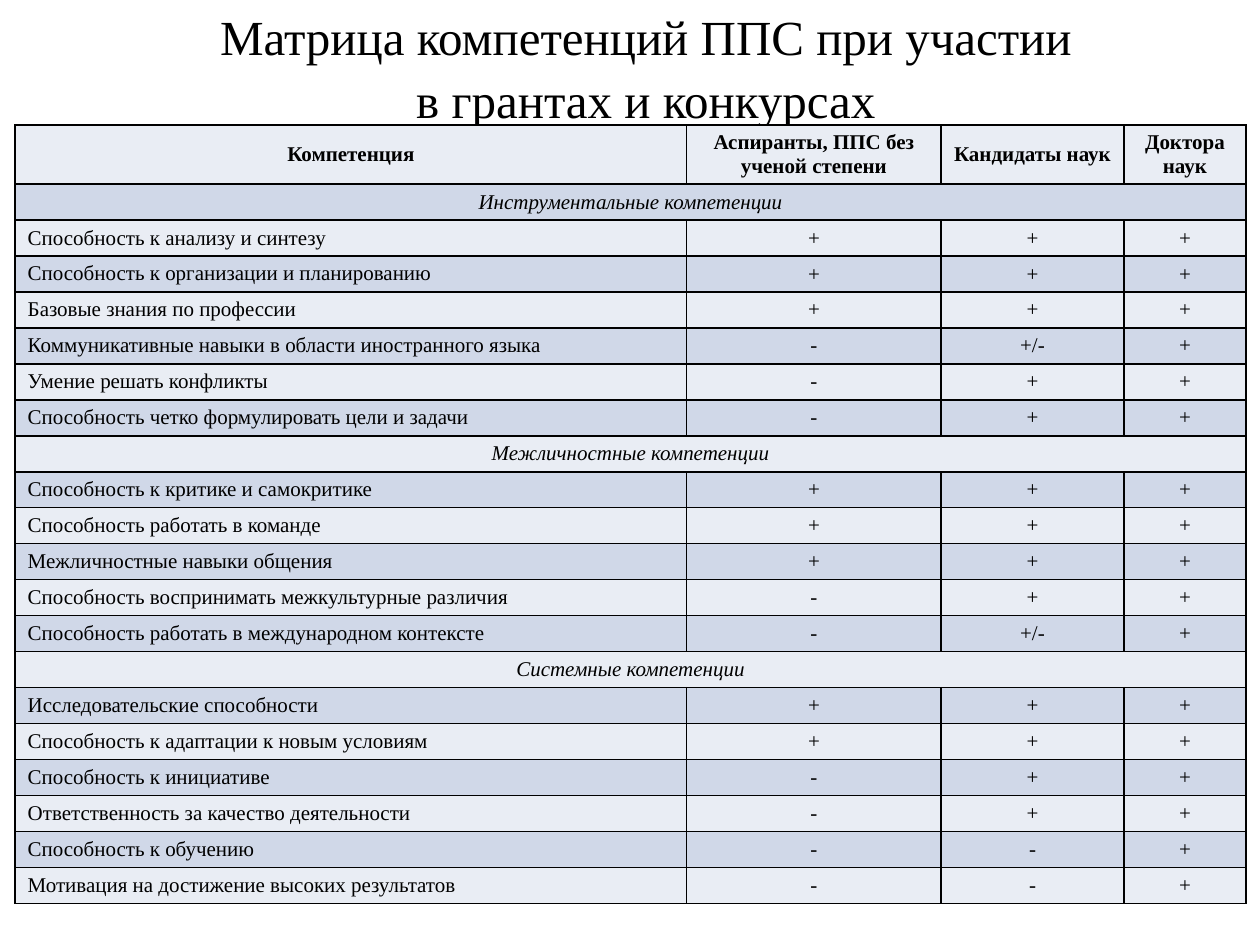
from pptx import Presentation
from pptx.dml.color import RGBColor
from pptx.enum.text import MSO_ANCHOR as Anchor, MSO_AUTO_SIZE as Fit, PP_ALIGN as Align
from pptx.oxml import parse_xml
from pptx.oxml.ns import nsdecls
from pptx.util import Inches, Pt

BLACK = RGBColor(0x00, 0x00, 0x00)
LIGHT = RGBColor(0xE9, 0xED, 0xF4)
BLUE = RGBColor(0xD0, 0xD8, 0xE8)
FONT = "Times New Roman"

# A row with one entry is a section heading across the table
ROWS = [
    ("Компетенция", "Аспиранты, ППС без ученой степени", "Кандидаты наук", "Доктора наук"),
    ("Инструментальные компетенции",),
    ("Способность к анализу и синтезу", "+", "+", "+"),
    ("Способность к организации и планированию", "+", "+", "+"),
    ("Базовые знания по профессии", "+", "+", "+"),
    ("Коммуникативные навыки в области иностранного языка", "-", "+/-", "+"),
    ("Умение решать конфликты", "-", "+", "+"),
    ("Способность четко формулировать цели и задачи", "-", "+", "+"),
    ("Межличностные компетенции",),
    ("Способность к критике и самокритике", "+", "+", "+"),
    ("Способность работать в команде", "+", "+", "+"),
    ("Межличностные навыки общения", "+", "+", "+"),
    ("Способность воспринимать межкультурные различия", "-", "+", "+"),
    ("Способность работать в международном контексте", "-", "+/-", "+"),
    ("Системные компетенции",),
    ("Исследовательские способности", "+", "+", "+"),
    ("Способность к адаптации к новым условиям", "+", "+", "+"),
    ("Способность к инициативе", "-", "+", "+"),
    ("Ответственность за качество деятельности", "-", "+", "+"),
    ("Способность к обучению", "-", "-", "+"),
    ("Мотивация на достижение высоких результатов", "-", "-", "+"),
]
WIDTHS = [5.33, 2.02, 1.45, 0.97]


def add_run(para, text, size, bold=False, italic=False):
    run = para.add_run()
    run.text = text
    font = run.font
    font.name, font.size = FONT, Pt(size)
    font.bold, font.italic = bold, italic
    font.color.rgb = BLACK


def add_edges(cell):
    props = cell._tc.get_or_add_tcPr()
    for n, side in enumerate(("lnL", "lnR", "lnT", "lnB")):
        props.insert(n, parse_xml(
            f'<a:{side} {nsdecls("a")} w="{Pt(1)}"><a:solidFill>'
            f'<a:srgbClr val="{BLACK}"/></a:solidFill></a:{side}>'))


prs = Presentation()
prs.slide_width, prs.slide_height = Inches(10), Inches(7.5)
slide = prs.slides.add_slide(prs.slide_layouts[5])

# Title
title = slide.shapes.title
title.left, title.top = Inches(1.54), Inches(-0.03)
title.width, title.height = Inches(7.17), Inches(1.04)
frame = title.text_frame
frame.word_wrap = True
frame.auto_size = Fit.NONE
frame.vertical_anchor = Anchor.TOP
para = frame.paragraphs[0]
para.alignment = Align.CENTER
para.line_spacing = 1.07
add_run(para, "Матрица компетенций ППС при участии в грантах и конкурсах", 28)

# Table grid
table = slide.shapes.add_table(
    len(ROWS), len(WIDTHS), Inches(0.12), Inches(0.99),
    Inches(sum(WIDTHS)), Inches(0.28 * len(ROWS))).table
for col, width in zip(table.columns, WIDTHS):
    col.width = Inches(width)
for row in table.rows:
    row.height = Inches(0.28)
table.rows[0].height = Inches(0.47)

# Table cells
for r, texts in enumerate(ROWS):
    head, section = r == 0, len(texts) == 1
    for c in range(len(WIDTHS)):
        cell = table.cell(r, c)
        cell.fill.solid()
        cell.fill.fore_color.rgb = BLUE if r % 2 else LIGHT
        add_edges(cell)
        if c >= len(texts):
            continue
        para = cell.text_frame.paragraphs[0]
        if head or c > 0:
            cell.vertical_anchor = Anchor.MIDDLE
        para.alignment = Align.CENTER if head or section or c > 0 else Align.LEFT
        add_run(para, texts[c], 12, bold=head, italic=section)
    if section:
        table.cell(r, 0).merge(table.cell(r, len(WIDTHS) - 1))

prs.save("out.pptx")
